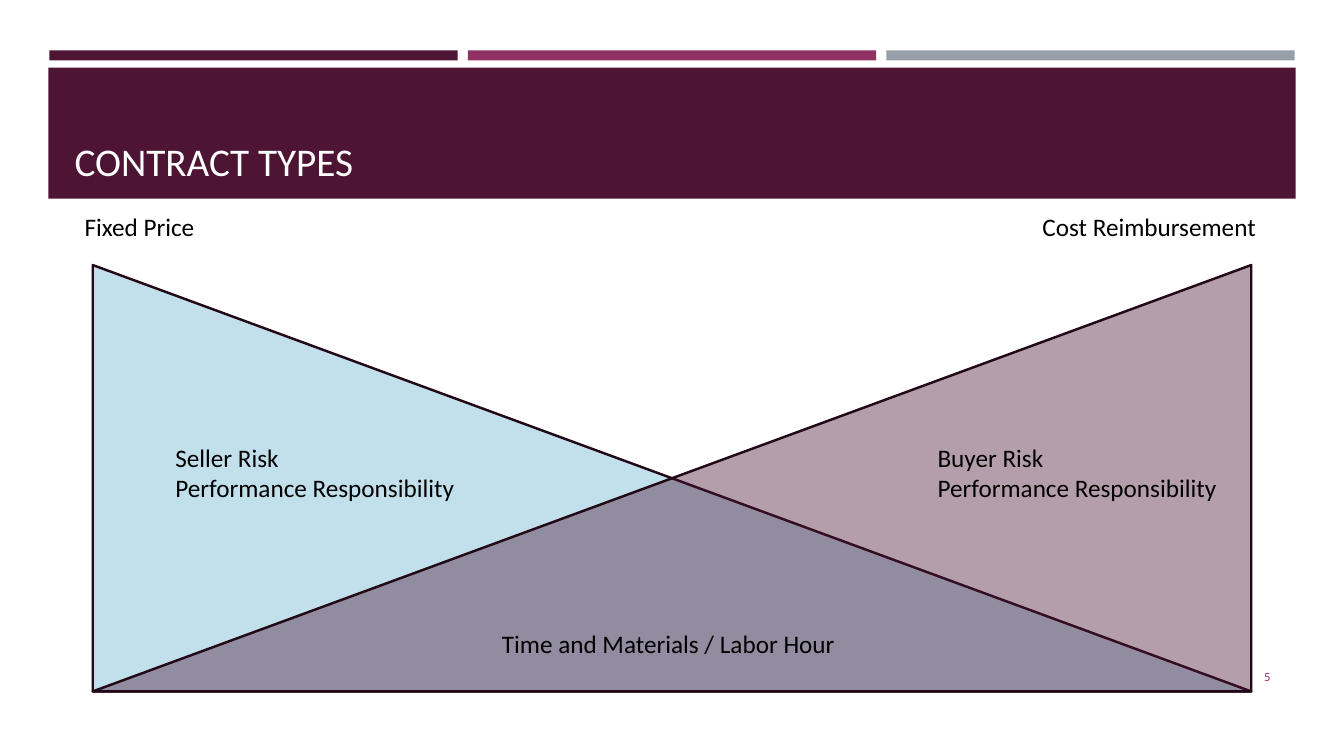
"""Build the contract types slide with its two overlapping risk triangles."""
from lxml import etree
from pptx import Presentation
from pptx.dml.color import RGBColor
from pptx.enum import shapes, text
from pptx.oxml.ns import qn
from pptx.util import Inches, Pt

PLUM = RGBColor(0x4D, 0x14, 0x34)
MAGENTA = RGBColor(0x90, 0x31, 0x63)
GRAY = RGBColor(0x96, 0x9F, 0xA7)
SKY = RGBColor(0xC2, 0xE0, 0xEB)
OUTLINE = RGBColor(0x22, 0x09, 0x17)
WHITE = RGBColor(0xFF, 0xFF, 0xFF)
BLACK = RGBColor(0, 0, 0)
LEFT, RIGHT = text.PP_ALIGN.LEFT, text.PP_ALIGN.RIGHT


def add_filled(kind, box, color):
    sp = s.shapes.add_shape(kind, *map(Inches, box))
    sp.shadow.inherit = False
    sp.fill.solid()
    sp.fill.fore_color.rgb = color
    sp.line.fill.background()
    return sp


def write(sp, content, size, color, align=LEFT, anchor=text.MSO_ANCHOR.TOP, wrap=True):
    tf = sp.text_frame
    tf.text = content
    tf.word_wrap = wrap
    tf.auto_size = text.MSO_AUTO_SIZE.NONE
    tf.vertical_anchor = anchor
    for p in tf.paragraphs:
        p.alignment = align
        p.font.name = "Calibri"
        p.font.size = Pt(size)
        p.font.color.rgb = color


prs = Presentation()
prs.slide_width, prs.slide_height = Inches(13.33), Inches(7.5)
s = prs.slides.add_slide(prs.slide_layouts[5])

for i, color in enumerate((PLUM, MAGENTA, GRAY)):
    add_filled(shapes.MSO_SHAPE.RECTANGLE, (0.49 + 4.15 * i, 0.5, 4.05, 0.1), color)
add_filled(shapes.MSO_SHAPE.RECTANGLE, (0.48, 0.67, 12.37, 1.3), PLUM)

title = s.shapes.title
title.left, title.top, title.width, title.height = map(Inches, (0.64, 0.77, 12.06, 1.11))
write(title, "CONTRACT TYPES", 28, WHITE, anchor=text.MSO_ANCHOR.BOTTOM)
title.element.getparent().append(title.element)

number = s.shapes.add_textbox(*map(Inches, (11.55, 6.51, 1.15, 0.4)))
write(number, "5", 9, MAGENTA, RIGHT, text.MSO_ANCHOR.MIDDLE)

triangles = []
for color in (SKY, PLUM):
    sp = add_filled(shapes.MSO_SHAPE.RIGHT_TRIANGLE, (0.92, 2.63, 11.49, 4.23), color)
    sp.line.color.rgb = OUTLINE
    sp.line.width = Pt(1.75)
    triangles.append(sp)
buyer = triangles[1].element.spPr
buyer.find(qn("a:xfrm")).set("flipH", "1")
fill_color = buyer.find(qn("a:solidFill")).find(qn("a:srgbClr"))
etree.SubElement(fill_color, qn("a:alpha"), val="41000")

headings = s.shapes.add_textbox(*map(Inches, (0.74, 2.05, 11.95, 0.4)))
write(headings, "Fixed Price\tCost Reimbursement", 18, BLACK)
tabs = etree.Element(qn("a:tabLst"))
etree.SubElement(tabs, qn("a:tab"), pos=str(Inches(9.5)), algn="l")
headings.text_frame.paragraphs[0].font
headings.text_frame.paragraphs[0]._p.get_or_add_pPr().insert(0, tabs)

labels = (
    ("Seller Risk\nPerformance Responsibility", (1.64, 4.34, 3.05, 0.71)),
    ("Buyer Risk\nPerformance Responsibility", (9.2, 4.34, 3.05, 0.71)),
    ("Time and Materials / Labor Hour", (4.88, 6.18, 3.58, 0.4)),
)
for content, box in labels:
    write(s.shapes.add_textbox(*map(Inches, box)), content, 18, BLACK, wrap=False)

prs.save("out.pptx")
